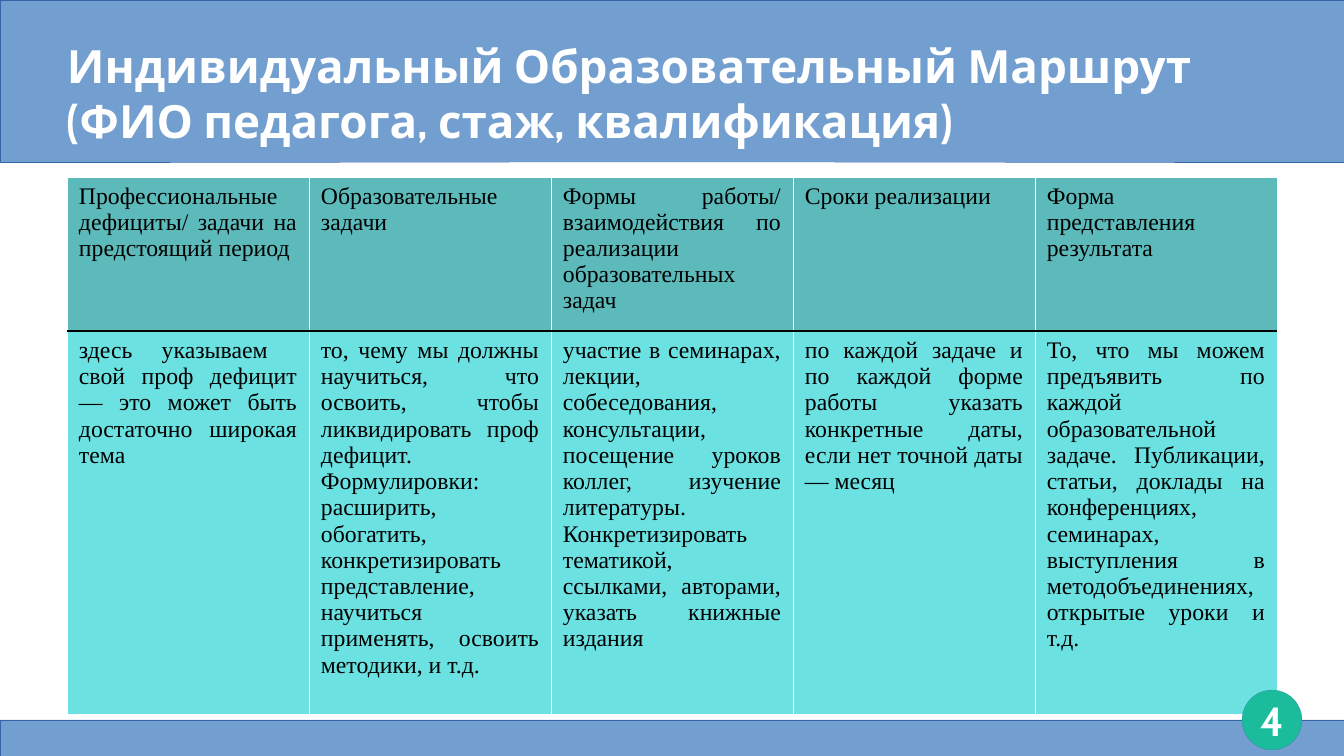
from lxml import etree
from pptx import Presentation
from pptx.dml.color import RGBColor
from pptx.enum.shapes import MSO_SHAPE
from pptx.enum.text import MSO_ANCHOR, PP_ALIGN
from pptx.oxml.ns import qn
from pptx.util import Emu, Pt

RECTANGLE, OVAL = MSO_SHAPE.RECTANGLE, MSO_SHAPE.OVAL
TOP, MIDDLE = MSO_ANCHOR.TOP, MSO_ANCHOR.MIDDLE
LEFT, CENTER, JUSTIFY = PP_ALIGN.LEFT, PP_ALIGN.CENTER, PP_ALIGN.JUSTIFY

EMU_PER_PX = 914400 / 122
PAGE_WIDTH, PAGE_HEIGHT = 1344, 756
BLUE, OUTLINE, GREEN = "729FCF", "3465A4", "1ABC9C"
WHITE, BLACK = "FFFFFF", "000000"
HEAD_FILL, BODY_FILL = "5CBABB", "6CE1E2"
HEADING_FONT, TABLE_FONT = "Cabin", "Times New Roman"
HAIRLINE, RULE = 0.06, 1.5

TITLE = "Индивидуальный Образовательный Маршрут\v(ФИО педагога, стаж, квалификация)"
ROUTE = [
    ("Профессиональные дефициты/ задачи на предстоящий период",
     "здесь указываем  свой проф дефицит — это может быть достаточно широкая тема"),
    ("Образовательные задачи",
     "то, чему мы должны научиться, что освоить, чтобы ликвидировать проф дефицит. "
     "Формулировки: расширить, обогатить, конкретизировать представление, "
     "научиться применять, освоить методики, и т.д."),
    ("Формы работы/ взаимодействия по реализации образовательных задач",
     "участие в семинарах, лекции, собеседования, консультации, посещение уроков "
     "коллег, изучение литературы. Конкретизировать тематикой, ссылками, авторами, "
     "указать книжные издания"),
    ("Сроки реализации",
     "по каждой задаче и по каждой форме работы указать конкретные даты, "
     "если нет точной даты — месяц"),
    ("Форма представления результата",
     "То, что мы можем предъявить по каждой образовательной задаче. Публикации, "
     "статьи, доклады на конференциях, семинарах, выступления в методобъединениях, "
     "открытые уроки и т.д."),
]


def px(length):
    return Emu(round(length * EMU_PER_PX))


def color(value):
    return RGBColor.from_string(value)


def add_panel(page, kind, box, fill):
    panel = page.shapes.add_shape(kind, *map(px, box))
    panel.shadow.inherit = False
    panel.fill.solid()
    panel.fill.fore_color.rgb = color(fill)
    panel.line.color.rgb = color(OUTLINE)
    panel.line.width = Pt(HAIRLINE)


def write(frame, text, font, size, ink, align, bold=False):
    frame.text = text
    for para in frame.paragraphs:
        para.alignment = align
        for span in para.runs:
            span.font.name = font
            span.font.size = Pt(size)
            span.font.bold = bold
            span.font.color.rgb = color(ink)


def add_heading(page, box, text, size, align):
    frame = page.shapes.add_textbox(*map(px, box)).text_frame
    frame.word_wrap = True
    frame.vertical_anchor = MIDDLE
    frame.margin_left = frame.margin_right = frame.margin_top = frame.margin_bottom = 0
    write(frame, text, HEADING_FONT, size, WHITE, align, bold=True)


def set_borders(cell, borders):
    """Borders come in the order left, right, top, bottom."""
    properties = cell._tc.get_or_add_tcPr()
    for index, (side, (ink, width)) in enumerate(zip("LRTB", borders)):
        line = etree.Element(qn(f"a:ln{side}"), w=str(Pt(width)))
        fill = etree.SubElement(line, qn("a:solidFill"))
        etree.SubElement(fill, qn("a:srgbClr"), val=ink)
        properties.insert(index, line)


def add_header(page, box):
    left, top, width, height = box
    add_panel(page, RECTANGLE, box, BLUE)
    add_heading(page, (left + 67, top + 9, width - 134, height + 5), TITLE, 27, LEFT)


def add_footer(page, box, number):
    left, top, width, height = box
    add_panel(page, RECTANGLE, box, BLUE)
    # Page number badge
    badge_left, badge_top, badge_size = left + width - 102, top - 30, 60
    add_panel(page, OVAL, (badge_left, badge_top, badge_size, badge_size), GREEN)
    add_heading(page, (badge_left - 18, badge_top - 6, badge_size + 36, badge_size + 12),
                number, 24, CENTER)


def add_route_table(page, box, head_height):
    left, top, width, height = box
    table = page.shapes.add_table(2, len(ROUTE), *map(px, box)).table
    for column in table.columns:
        column.width = px(width / len(ROUTE))
    # Minimum heights: the body row grows to fit its text
    table.rows[0].height = px(head_height)
    table.rows[1].height = px(height - head_height)

    thin, rule = (WHITE, HAIRLINE), (BLACK, RULE)
    row_styles = [
        (HEAD_FILL, (thin, thin, thin, rule)),
        (BODY_FILL, (thin, thin, rule, thin)),
    ]
    for column, texts in enumerate(ROUTE):
        for row, (text, (fill, borders)) in enumerate(zip(texts, row_styles)):
            cell = table.cell(row, column)
            cell.margin_left = cell.margin_right = px(12)
            cell.margin_top = cell.margin_bottom = px(6)
            cell.vertical_anchor = TOP
            cell.fill.solid()
            cell.fill.fore_color.rgb = color(fill)
            set_borders(cell, borders)
            write(cell.text_frame, text, TABLE_FONT, 14, BLACK, JUSTIFY)


def main():
    deck = Presentation()
    deck.slide_width, deck.slide_height = px(PAGE_WIDTH), px(PAGE_HEIGHT)
    page = deck.slides.add_slide(deck.slide_layouts[6])
    add_header(page, (0, 0, PAGE_WIDTH, 162))
    add_route_table(page, (67, 177, 1210, 377), 142)
    add_footer(page, (0, 720, PAGE_WIDTH, 36), "4")
    deck.save("out.pptx")


if __name__ == "__main__":
    main()
